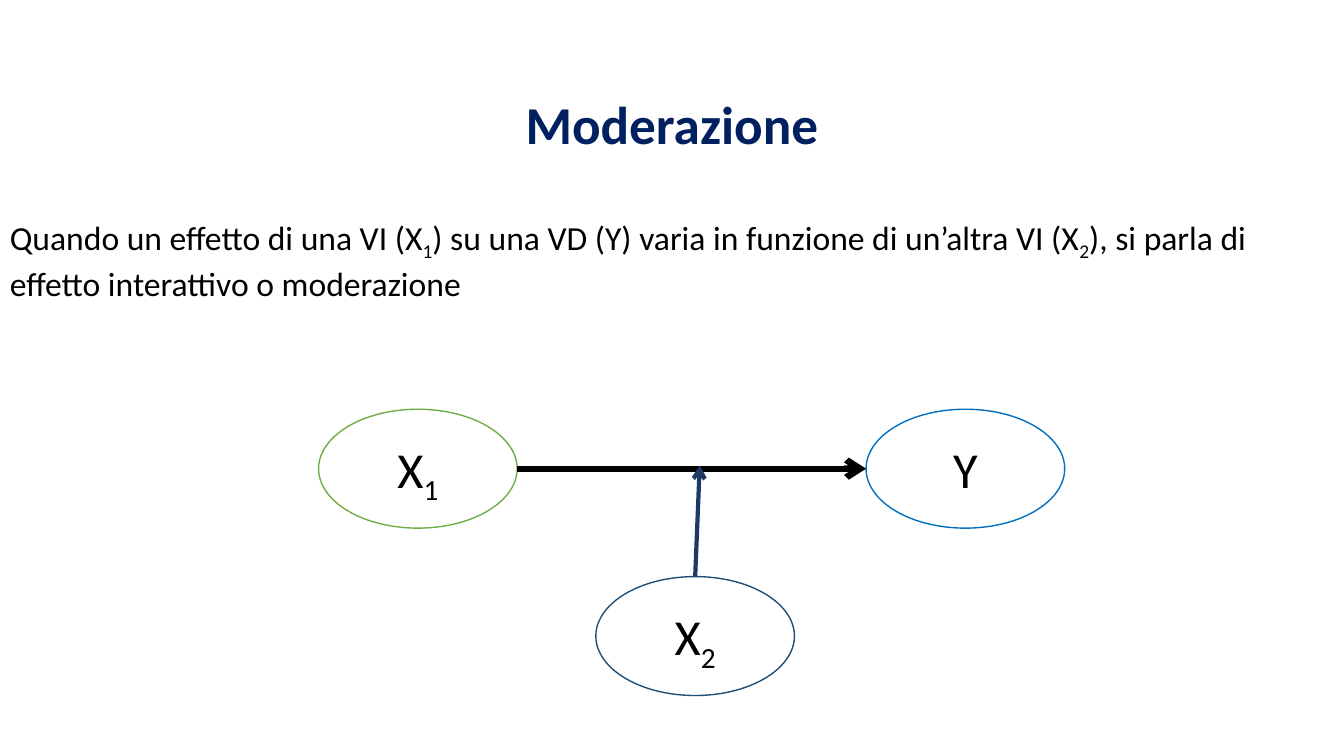
from dataclasses import dataclass

from lxml import etree
from pptx import Presentation
from pptx.dml.color import RGBColor
from pptx.enum.shapes import MSO_CONNECTOR, MSO_SHAPE
from pptx.enum.text import MSO_ANCHOR, MSO_AUTO_SIZE, PP_ALIGN
from pptx.oxml.ns import qn
from pptx.util import Inches, Pt

ELLIPSE = MSO_SHAPE.OVAL
STRAIGHT = MSO_CONNECTOR.STRAIGHT
TOP = MSO_ANCHOR.TOP
FIT_SHAPE = MSO_AUTO_SIZE.SHAPE_TO_FIT_TEXT
LEFT, CENTER = PP_ALIGN.LEFT, PP_ALIGN.CENTER

FONT = "Calibri"
BLACK, WHITE, NAVY = "000000", "FFFFFF", "002060"
SLIDE_W, SLIDE_H = 13.33, 7.5
NODE_W, NODE_H = 1.97, 1.18
LABEL_W, LABEL_H = 1.34, 0.71


@dataclass
class Span:
    text: str
    subscript: bool = False


@dataclass
class Node:
    left: float
    top: float
    color: str
    label: list[Span]


X1 = Node(3.16, 4.06, "70AD47", [Span("X"), Span("1", True)])
Y = Node(8.59, 4.06, "0070C0", [Span("Y")])
X2 = Node(5.91, 5.72, "1F4E79", [Span("X"), Span("2", True)])

DEFINITION = [
    Span("Quando un effetto di una VI (X"),
    Span("1", True),
    Span(") su una VD (Y) varia in funzione di un’altra VI (X"),
    Span("2", True),
    Span("), si parla di effetto interattivo o moderazione"),
]


def rgb(color: str) -> RGBColor:
    return RGBColor.from_string(color)


def place(shape, left: float, top: float, width: float, height: float) -> None:
    shape.left, shape.top = Inches(left), Inches(top)
    shape.width, shape.height = Inches(width), Inches(height)


def write(shape, spans: list[Span], size: float, align=CENTER,
          color: str = BLACK, bold: bool = False) -> None:
    tf = shape.text_frame
    tf.word_wrap = True
    tf.auto_size = FIT_SHAPE
    tf.vertical_anchor = TOP
    tf.margin_left = tf.margin_right = Inches(0.1)
    tf.margin_top = tf.margin_bottom = Inches(0.05)
    p = tf.paragraphs[0]
    p.alignment = align
    for span in spans:
        r = p.add_run()
        r.text = span.text
        r.font.name = FONT
        r.font.size = Pt(size)
        r.font.bold = bold
        r.font.color.rgb = rgb(color)
        if span.subscript:
            r.font._element.set("baseline", "-25000")


def add_text(s, left: float, top: float, width: float, height: float,
             spans: list[Span], size: float, align=CENTER) -> None:
    box = s.shapes.add_textbox(Inches(left), Inches(top), Inches(width), Inches(height))
    write(box, spans, size, align)


def add_ellipse(s, node: Node):
    sp = s.shapes.add_shape(ELLIPSE, Inches(node.left), Inches(node.top),
                            Inches(NODE_W), Inches(NODE_H))
    sp.shadow.inherit = False
    sp.fill.solid()
    sp.fill.fore_color.rgb = rgb(WHITE)
    sp.line.color.rgb = rgb(node.color)
    sp.line.width = Pt(1)
    return sp


def add_label(s, node: Node) -> None:
    add_text(s, node.left + (NODE_W - LABEL_W) / 2, node.top + (NODE_H - LABEL_H) / 2,
             LABEL_W, LABEL_H, node.label, 36)


def add_arrow(s, x1: float, y1: float, x2: float, y2: float, color: str, width: float):
    line = s.shapes.add_connector(STRAIGHT, Inches(x1), Inches(y1), Inches(x2), Inches(y2))
    line.line.color.rgb = rgb(color)
    line.line.width = Pt(width)
    etree.SubElement(line.line._get_or_add_ln(), qn("a:tailEnd"), type="arrow")
    etree.SubElement(line._element.spPr, qn("a:effectLst"))
    return line


def main() -> None:
    prs = Presentation()
    prs.slide_width, prs.slide_height = Inches(SLIDE_W), Inches(SLIDE_H)
    s = prs.slides.add_slide(prs.slide_layouts[5])

    title = s.shapes.title
    place(title, 0, 0.86, SLIDE_W, 0.74)
    write(title, [Span("Moderazione")], 38, color=NAVY, bold=True)
    add_text(s, 0, 2.1, SLIDE_W, 1.21, DEFINITION, 24, LEFT)

    nodes = [X1, Y, X2]
    ellipses = [add_ellipse(s, node) for node in nodes]

    effect_y = X1.top + NODE_H / 2
    add_arrow(s, X1.left + NODE_W, effect_y, Y.left, effect_y, BLACK, 4.5)
    moderation = add_arrow(s, X2.left + NODE_W / 2, X2.top, 6.94, 4.62, "203864", 3)
    moderation.begin_connect(ellipses[nodes.index(X2)], 0)

    for node in nodes:
        add_label(s, node)

    prs.save("out.pptx")


if __name__ == "__main__":
    main()
